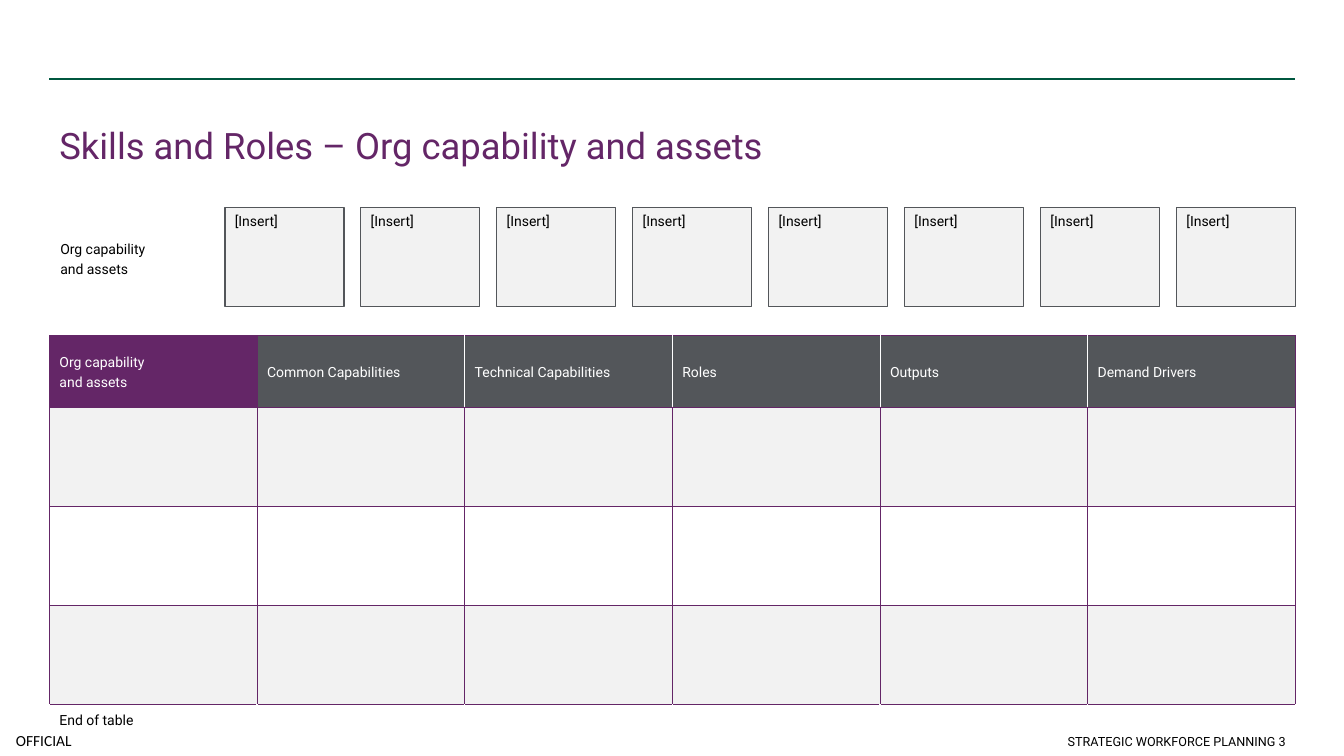
from lxml import etree
from pptx import Presentation
from pptx.dml.color import RGBColor
from pptx.enum.shapes import MSO_CONNECTOR, MSO_SHAPE
from pptx.enum.text import MSO_ANCHOR, PP_ALIGN
from pptx.oxml.ns import qn
from pptx.util import Pt

STRAIGHT = MSO_CONNECTOR.STRAIGHT
RECT = MSO_SHAPE.RECTANGLE
TOP, MIDDLE, BOTTOM = MSO_ANCHOR.TOP, MSO_ANCHOR.MIDDLE, MSO_ANCHOR.BOTTOM
LEFT, CENTER, RIGHT = PP_ALIGN.LEFT, PP_ALIGN.CENTER, PP_ALIGN.RIGHT

COLORS = {
    "green": "00573F",
    "purple": "642667",
    "slate": "53565A",
    "pale": "F2F2F2",
    "white": "FFFFFF",
    "black": "000000",
}
MARGIN, CONTENT_WIDTH = 35.3, 890
ASSETS_LABEL = "Org capability\vand assets"
HEADERS = [ASSETS_LABEL, "Common Capabilities", "Technical Capabilities",
           "Roles", "Outputs", "Demand Drivers"]
ROW_HEIGHTS = [51, 70.9, 70.9, 70.9, 22.3]
ROW_FILLS = ["slate", "pale", "white", "pale", "white"]


def rgb(name):
    return RGBColor.from_string(COLORS[name])


def write(tf, text, size=10, color="black", font="Roboto", align=LEFT, spacing=None):
    tf.text = text
    p = tf.paragraphs[0]
    p.alignment = align
    if spacing:
        p.line_spacing = spacing
    p.font.size = Pt(size)
    p.font.name = font
    p.font.color.rgb = rgb(color)


def add_text(slide, box, text, anchor=MIDDLE, inset=True, **style):
    tf = slide.shapes.add_textbox(*map(Pt, box)).text_frame
    tf.word_wrap = True
    tf.vertical_anchor = anchor
    if not inset:
        tf.margin_left = tf.margin_right = tf.margin_top = tf.margin_bottom = 0
    write(tf, text, **style)


def add_header(slide, x, y, w):
    # Rule and title
    rule = slide.shapes.add_connector(STRAIGHT, Pt(x), Pt(y), Pt(x + w), Pt(y))
    rule.line.color.rgb = rgb("green")
    rule.line.width = Pt(1)
    etree.SubElement(rule._element.spPr, qn("a:effectLst"))
    add_text(slide, (x, y + 7.2, w, 73.4), "Skills and Roles – Org capability and assets",
             size=26, color="purple", spacing=1.2)


def add_assets(slide, x, y, w, h, count=8, box_width=85, label_width=125.3):
    # Row label
    add_text(slide, (x + 0.7, y + 21.6, 113, 28), ASSETS_LABEL, spacing=1.2)
    # Evenly spaced boxes, flush with the right edge
    pitch = (w - label_width - box_width) / (count - 1)
    for i in range(count):
        sp = slide.shapes.add_shape(RECT, Pt(x + label_width + i * pitch), Pt(y),
                                    Pt(box_width), Pt(h))
        sp.shadow.inherit = False
        sp.fill.solid()
        sp.fill.fore_color.rgb = rgb("pale")
        sp.line.color.rgb = rgb("slate")
        sp.line.width = Pt(1)
        sp.text_frame.vertical_anchor = TOP
        write(sp.text_frame, "[Insert]")


def set_borders(cell, borders):
    tc_pr = cell._tc.get_or_add_tcPr()
    for side in "LRTB":
        if side in borders:
            ln = etree.SubElement(tc_pr, qn(f"a:ln{side}"), w=str(Pt(0.5)))
            fill = etree.SubElement(ln, qn("a:solidFill"))
            etree.SubElement(fill, qn("a:srgbClr"), val=COLORS[borders[side]])


def cell_borders(row, col):
    if row == len(ROW_HEIGHTS) - 1:
        return {"T": "purple"}
    borders = dict.fromkeys("LRTB", "purple")
    if row == 0:
        if col > 1:
            borders["L"] = "white"
        if 0 < col < len(HEADERS) - 1:
            borders["R"] = "white"
    return borders


def add_capability_table(slide, x, y, w):
    rows, cols = len(ROW_HEIGHTS), len(HEADERS)
    table = slide.shapes.add_table(rows, cols, Pt(x), Pt(y), Pt(w),
                                   Pt(sum(ROW_HEIGHTS))).table
    table.first_row = table.horz_banding = False
    for column in table.columns:
        column.width = Pt(w / cols)
    for r, height in enumerate(ROW_HEIGHTS):
        table.rows[r].height = Pt(height)
        for c in range(cols):
            cell = table.cell(r, c)
            set_borders(cell, cell_borders(r, c))
            cell.fill.solid()
            cell.fill.fore_color.rgb = rgb("purple" if r == c == 0 else ROW_FILLS[r])
            if r == 0:
                cell.vertical_anchor = MIDDLE
                write(cell.text_frame, HEADERS[c], color="white", spacing=1.2)
            elif r == rows - 1 and c == 0:
                write(cell.text_frame, "End of table", spacing=1.2)
            else:
                # Small type keeps empty cells from stretching the row
                p = cell.text_frame.paragraphs[0]
                etree.SubElement(p._p, qn("a:endParaRPr"), sz="1000")


def add_footer(slide, y, right):
    add_text(slide, (0, y + 7.2, 62.6, 22.3), "OFFICIAL", inset=False,
             size=11, font="Calibri", align=CENTER)
    add_text(slide, (right - 433, y, 433, 28), "STRATEGIC WORKFORCE PLANNING 3",
             anchor=BOTTOM, size=9, align=RIGHT)


def main():
    prs = Presentation()
    prs.slide_width, prs.slide_height = Pt(960), Pt(540)
    slide = prs.slides.add_slide(prs.slide_layouts[6])
    add_header(slide, MARGIN, 56.5, CONTENT_WIDTH)
    add_assets(slide, MARGIN, 148.3, CONTENT_WIDTH, 70.8)
    add_capability_table(slide, MARGIN, 239.6, CONTENT_WIDTH)
    add_footer(slide, 510.5, MARGIN + CONTENT_WIDTH)
    prs.save("out.pptx")


if __name__ == "__main__":
    main()
